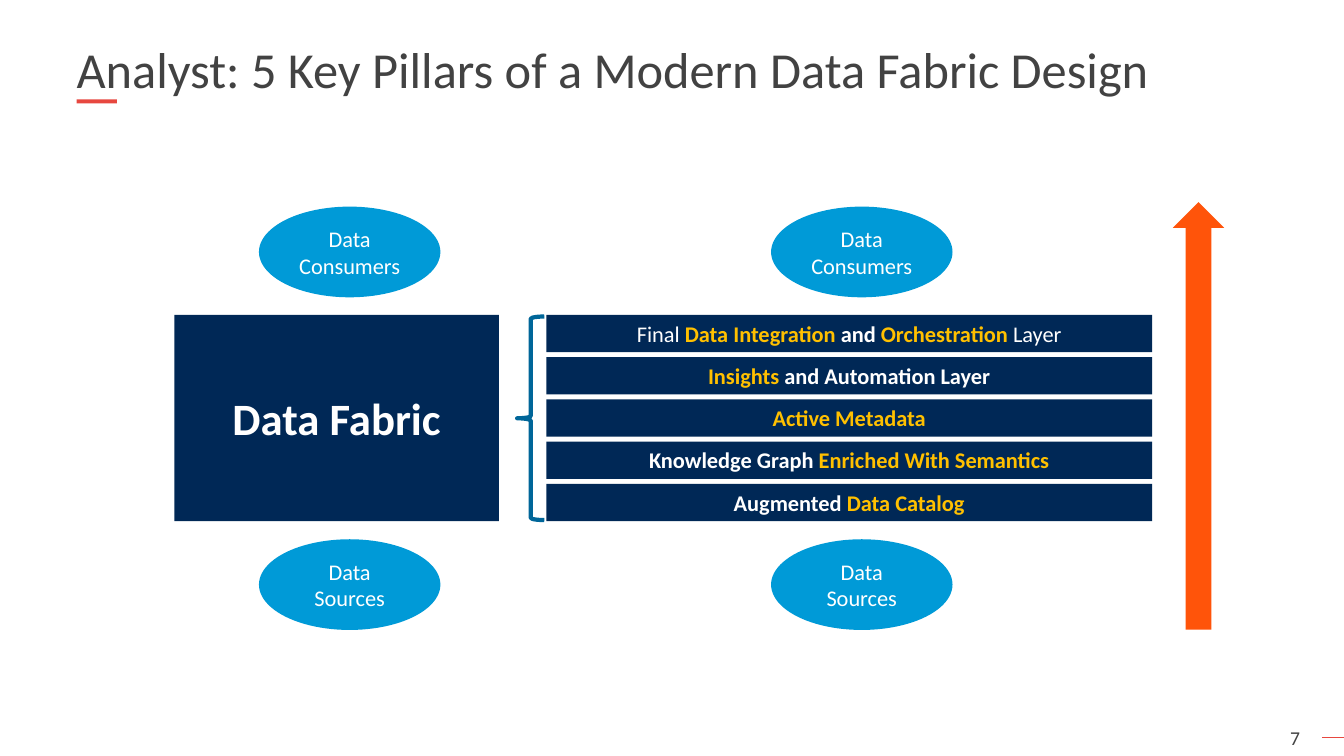
from dataclasses import dataclass

import pptx
import pptx.dml.color
import pptx.enum.shapes
import pptx.enum.text
import pptx.oxml.ns
import pptx.shapes.autoshape
import pptx.text.text
import pptx.util
from lxml import etree

Pt = pptx.util.Pt
Shape = pptx.enum.shapes.MSO_SHAPE
Anchor = pptx.enum.text.MSO_ANCHOR
Align = pptx.enum.text.PP_ALIGN
AutoSize = pptx.enum.text.MSO_AUTO_SIZE


@dataclass(frozen=True)
class Theme:
    font: str = "Calibri"
    ink: str = "424242"
    accent: str = "E7473F"
    navy: str = "002856"
    sky: str = "009AD7"
    gold: str = "FFC000"
    white: str = "FFFFFF"
    orange: str = "FF540A"
    brace: str = "006699"
    title_size: float = 36
    fabric_size: float = 32
    label_size: float = 16
    number_size: float = 14


THEME = Theme()


@dataclass(frozen=True)
class Frame:
    left: float
    top: float
    width: float
    height: float

    def lengths(self) -> list[pptx.util.Length]:
        return [Pt(n) for n in (self.left, self.top, self.width, self.height)]


@dataclass(frozen=True)
class Span:
    text: str
    color: str = THEME.white
    bold: bool = True


@dataclass(frozen=True)
class Oval:
    left: float
    top: float
    noun: str


def rgb(value: str) -> pptx.dml.color.RGBColor:
    return pptx.dml.color.RGBColor.from_string(value)


def add_span(para: pptx.text.text._Paragraph, span: Span, size: float) -> None:
    run = para.add_run()
    run.text = span.text
    run.font.name = THEME.font
    run.font.size = Pt(size)
    run.font.bold = span.bold
    run.font.color.rgb = rgb(span.color)


def set_insets(text_frame: pptx.text.text.TextFrame, x: float, y: float) -> None:
    text_frame.margin_left = text_frame.margin_right = Pt(x)
    text_frame.margin_top = text_frame.margin_bottom = Pt(y)


def add_solid(shapes, kind: Shape, frame: Frame, fill: str) -> pptx.shapes.autoshape.Shape:
    box = shapes.add_shape(kind, *frame.lengths())
    box.shadow.inherit = False
    box.fill.solid()
    box.fill.fore_color.rgb = rgb(fill)
    box.line.fill.background()
    return box


def add_label(box: pptx.shapes.autoshape.Shape, lines: list[list[Span]], size: float,
              anchor: Anchor = Anchor.MIDDLE) -> None:
    box.text_frame.word_wrap = True
    box.text_frame.vertical_anchor = anchor
    para = box.text_frame.paragraphs[0]
    para.alignment = Align.CENTER
    for index, spans in enumerate(lines):
        if index:
            para.add_line_break()
        for span in spans:
            add_span(para, span, size)


def add_title(page, text: str) -> None:
    title = page.shapes.title
    title.left, title.top, title.width, title.height = Frame(54.7, 29.5, 844.6, 41.8).lengths()
    text_frame = title.text_frame
    text_frame.word_wrap = True
    text_frame.auto_size = AutoSize.NONE
    text_frame.vertical_anchor = Anchor.BOTTOM
    set_insets(text_frame, 0, 0)
    para = text_frame.paragraphs[0]
    para.alignment = Align.LEFT
    para.line_spacing = 0.9
    add_span(para, Span(text, THEME.ink, False), THEME.title_size)


def add_page_number(page, number: str) -> None:
    box = page.shapes.add_textbox(*Frame(914.4, 513.4, 45, 26.6).lengths())
    box.text_frame.word_wrap = True
    box.text_frame.vertical_anchor = Anchor.MIDDLE
    add_span(box.text_frame.paragraphs[0], Span(number, THEME.ink, False), THEME.number_size)
    rule = page.shapes.add_connector(pptx.enum.shapes.MSO_CONNECTOR.STRAIGHT,
                                     Pt(960), Pt(527), Pt(944), Pt(527))
    rule.line.color.rgb = rgb(THEME.accent)
    rule.line.width = Pt(1)
    etree.SubElement(rule._element.spPr, pptx.oxml.ns.qn("a:effectLst"))


LAYERS = [
    [Span("Final ", bold=False), Span("Data Integration ", THEME.gold), Span("and "),
     Span("Orchestration ", THEME.gold), Span("Layer", bold=False)],
    [Span("Insights", THEME.gold), Span(" and Automation Layer")],
    [Span("Active Metadata", THEME.gold)],
    [Span("Knowledge Graph "), Span("Enriched With Semantics", THEME.gold)],
    [Span("Augmented "), Span("Data Catalog", THEME.gold)],
]
LAYER_TOP, LAYER_STEP, LAYER_HEIGHT = 224.9, 30.2, 26.6
OVALS = [Oval(left, top, noun)
         for left in (185, 550.8)
         for top, noun in ((147.6, "Consumers"), (385.2, "Sources"))]


def main() -> None:
    deck = pptx.Presentation()
    deck.slide_width, deck.slide_height = Pt(960), Pt(540)
    page = deck.slides.add_slide(deck.slide_layouts[5])

    # Title, its accent and the page number
    add_solid(page.shapes, Shape.RECTANGLE, Frame(54.7, 71.1, 28.8, 2.9), THEME.accent)
    add_page_number(page, "7")
    add_title(page, "Analyst: 5 Key Pillars of a Modern Data Fabric Design")

    # Consumers above and sources below each column
    for oval in OVALS:
        box = add_solid(page.shapes, Shape.OVAL, Frame(oval.left, oval.top, 129.6, 64.8), THEME.sky)
        set_insets(box.text_frame, 0, 0)
        add_label(box, [[Span("Data", bold=False)], [Span(oval.noun, bold=False)]],
                  THEME.label_size)

    # Five layers
    stack = page.shapes.add_group_shape()
    for index, spans in enumerate(LAYERS):
        frame = Frame(390.2, LAYER_TOP + index * LAYER_STEP, 432.7, LAYER_HEIGHT)
        bar = add_solid(stack.shapes, Shape.RECTANGLE, frame, THEME.navy)
        add_label(bar, [spans], THEME.label_size, Anchor.TOP)
        bar.text_frame.auto_size = AutoSize.SHAPE_TO_FIT_TEXT

    # Data fabric block, brace and upward arrow
    fabric = add_solid(page.shapes, Shape.RECTANGLE, Frame(124.5, LAYER_TOP, 232, 147.4), THEME.navy)
    add_label(fabric, [[Span("Data Fabric")]], THEME.fabric_size)
    add_solid(page.shapes, Shape.UP_ARROW, Frame(837.7, 144.4, 36.7, 305.3), THEME.orange)
    brace = page.shapes.add_shape(Shape.LEFT_BRACE, *Frame(369.4, 226.1, 19.4, 145.4).lengths())
    brace.shadow.inherit = False
    brace.fill.background()
    brace.line.color.rgb = rgb(THEME.brace)
    brace.line.width = Pt(3)

    deck.save("out.pptx")


if __name__ == "__main__":
    main()
